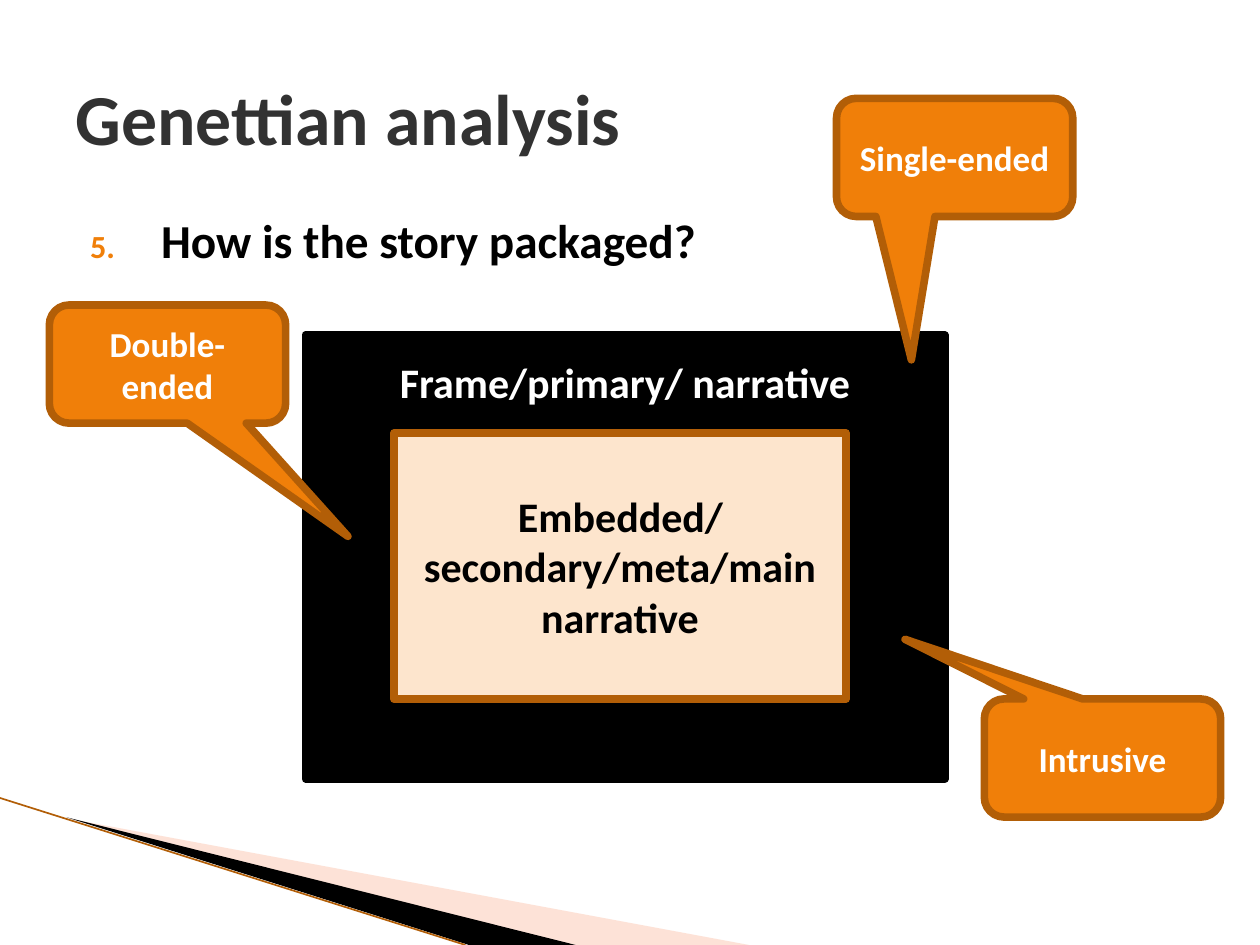
"""Build the Genettian analysis slide on how a story is packaged."""
from dataclasses import dataclass

from lxml import etree
from pptx import Presentation
from pptx.dml.color import RGBColor
from pptx.enum.shapes import MSO_CONNECTOR, MSO_SHAPE
from pptx.enum.text import MSO_ANCHOR, PP_ALIGN
from pptx.oxml.ns import qn
from pptx.shapes.autoshape import Shape
from pptx.slide import Slide
from pptx.util import Pt

STRAIGHT = MSO_CONNECTOR.STRAIGHT
RECTANGLE = MSO_SHAPE.RECTANGLE
CALLOUT = MSO_SHAPE.ROUNDED_RECTANGULAR_CALLOUT
TOP, MIDDLE = MSO_ANCHOR.TOP, MSO_ANCHOR.MIDDLE
LEFT, CENTER = PP_ALIGN.LEFT, PP_ALIGN.CENTER


@dataclass(frozen=True)
class Theme:
    font: str = "Calibri"
    black: str = "000000"
    white: str = "FFFFFF"
    heading: str = "323232"
    accent: str = "F07F09"
    outline: str = "B25E07"
    cream: str = "FDE5CD"
    blush: str = "FCB79B"
    title_size: float = 41
    question_size: float = 27
    narrative_size: float = 24
    callout_size: float = 20
    border: float = 4.33
    hairline: float = 0.95


THEME = Theme()


@dataclass(frozen=True)
class Area:
    left: float
    top: float
    width: float
    height: float

    def lengths(self) -> tuple[Pt, ...]:
        return Pt(self.left), Pt(self.top), Pt(self.width), Pt(self.height)


@dataclass(frozen=True)
class Narrative:
    label: str
    area: Area
    fill: str
    line: str
    ink: str
    anchor: MSO_ANCHOR


@dataclass(frozen=True)
class Callout:
    label: str
    left: float
    top: float
    tip_x: float
    tip_y: float


@dataclass(frozen=True)
class Wedge:
    points: tuple[tuple[float, float], ...]
    fill: str
    opacity: int


CALLOUT_WIDTH, CALLOUT_HEIGHT = 135, 67.5
TITLE_AREA = Area(36, 21.6, 648, 90)
QUESTION_AREA = Area(36, 117, 648, 356)

NARRATIVES = (
    Narrative("Frame/primary/ narrative", Area(174.5, 191.5, 365.5, 253.5),
              THEME.black, THEME.black, THEME.white, TOP),
    Narrative("Embedded/secondary/meta/main narrative", Area(225, 247.5, 258.5, 152),
              THEME.cream, THEME.outline, THEME.black, MIDDLE),
)
CALLOUTS = (
    Callout("Double-ended", 28.2, 174.3, 0.764, 1.459),
    Callout("Single-ended", 478, 56.2, -0.183, 1.714),
    Callout("Intrusive", 562.5, 399.4, -0.836, -1.005),
)
WEDGES = (
    Wedge(((39.6, 468.4), (428, 540), (328, 540)), THEME.blush, 40),
    Wedge(((38, 467.3), (329, 540), (268, 540)), THEME.black, 100),
)


def color(code: str) -> RGBColor:
    return RGBColor.from_string(code)


def write(holder: Shape, text: str, size: float, ink: str,
          align: PP_ALIGN = CENTER, anchor: MSO_ANCHOR = MIDDLE) -> None:
    frame = holder.text_frame
    frame.word_wrap = True
    frame.vertical_anchor = anchor
    frame.text = text
    paragraph = frame.paragraphs[0]
    paragraph.alignment = align
    font = paragraph.runs[0].font
    font.name, font.size, font.bold = THEME.font, Pt(size), True
    font.color.rgb = color(ink)


def paint(shape: Shape, fill: str, line: str) -> None:
    shape.shadow.inherit = False
    shape.fill.solid()
    shape.fill.fore_color.rgb = color(fill)
    shape.line.color.rgb = color(line)
    shape.line.width = Pt(THEME.border)


def draw_wedge(slide: Slide, wedge: Wedge) -> None:
    start, *rest = wedge.points
    builder = slide.shapes.build_freeform(*start, scale=Pt(1))
    builder.add_line_segments(rest, close=True)
    shape = builder.convert_to_shape()
    paint(shape, wedge.fill, wedge.fill)
    shape.line.fill.background()
    if wedge.opacity < 100:
        tint = shape.fill._xPr.find(qn("a:solidFill"))[0]
        etree.SubElement(tint, qn("a:alpha"), val=str(wedge.opacity * 1000))


def draw_edge(slide: Slide) -> None:
    edge = slide.shapes.add_connector(STRAIGHT, Pt(0), Pt(456), Pt(266), Pt(540))
    edge.line.color.rgb = color(THEME.outline)
    edge.line.width = Pt(THEME.hairline)
    etree.SubElement(edge._element.spPr, qn("a:effectLst"))


def draw_question(slide: Slide) -> None:
    question = slide.shapes.add_textbox(*QUESTION_AREA.lengths())
    write(question, "How is the story packaged?", THEME.question_size,
          THEME.black, LEFT, TOP)
    properties = question.text_frame.paragraphs[0]._p.get_or_add_pPr()
    properties.set("marL", str(Pt(49)))
    properties.set("indent", str(Pt(-40.5)))
    bullet_color = etree.SubElement(properties, qn("a:buClr"))
    etree.SubElement(bullet_color, qn("a:srgbClr"), val=THEME.accent)
    etree.SubElement(properties, qn("a:buSzPct"), val="68000")
    etree.SubElement(properties, qn("a:buFont"), typeface=THEME.font)
    etree.SubElement(properties, qn("a:buAutoNum"), type="arabicPeriod", startAt="5")


def draw_narrative(slide: Slide, narrative: Narrative) -> None:
    box = slide.shapes.add_shape(RECTANGLE, *narrative.area.lengths())
    paint(box, narrative.fill, narrative.line)
    write(box, narrative.label, THEME.narrative_size, narrative.ink,
          anchor=narrative.anchor)
    if narrative.anchor == TOP:
        box.text_frame.margin_top = Pt(12)


def draw_callout(slide: Slide, callout: Callout) -> None:
    area = Area(callout.left, callout.top, CALLOUT_WIDTH, CALLOUT_HEIGHT)
    bubble = slide.shapes.add_shape(CALLOUT, *area.lengths())
    bubble.adjustments[0] = callout.tip_x
    bubble.adjustments[1] = callout.tip_y
    paint(bubble, THEME.accent, THEME.outline)
    write(bubble, callout.label, THEME.callout_size, THEME.white)


def main() -> None:
    deck = Presentation()
    deck.slide_width, deck.slide_height = Pt(720), Pt(540)
    slide = deck.slides.add_slide(deck.slide_layouts[6])
    for wedge in WEDGES:
        draw_wedge(slide, wedge)
    draw_edge(slide)
    draw_question(slide)
    title = slide.shapes.add_textbox(*TITLE_AREA.lengths())
    write(title, "Genettian analysis", THEME.title_size, THEME.heading, LEFT)
    for narrative in NARRATIVES:
        draw_narrative(slide, narrative)
    for callout in CALLOUTS:
        draw_callout(slide, callout)
    deck.save("out.pptx")


if __name__ == "__main__":
    main()
